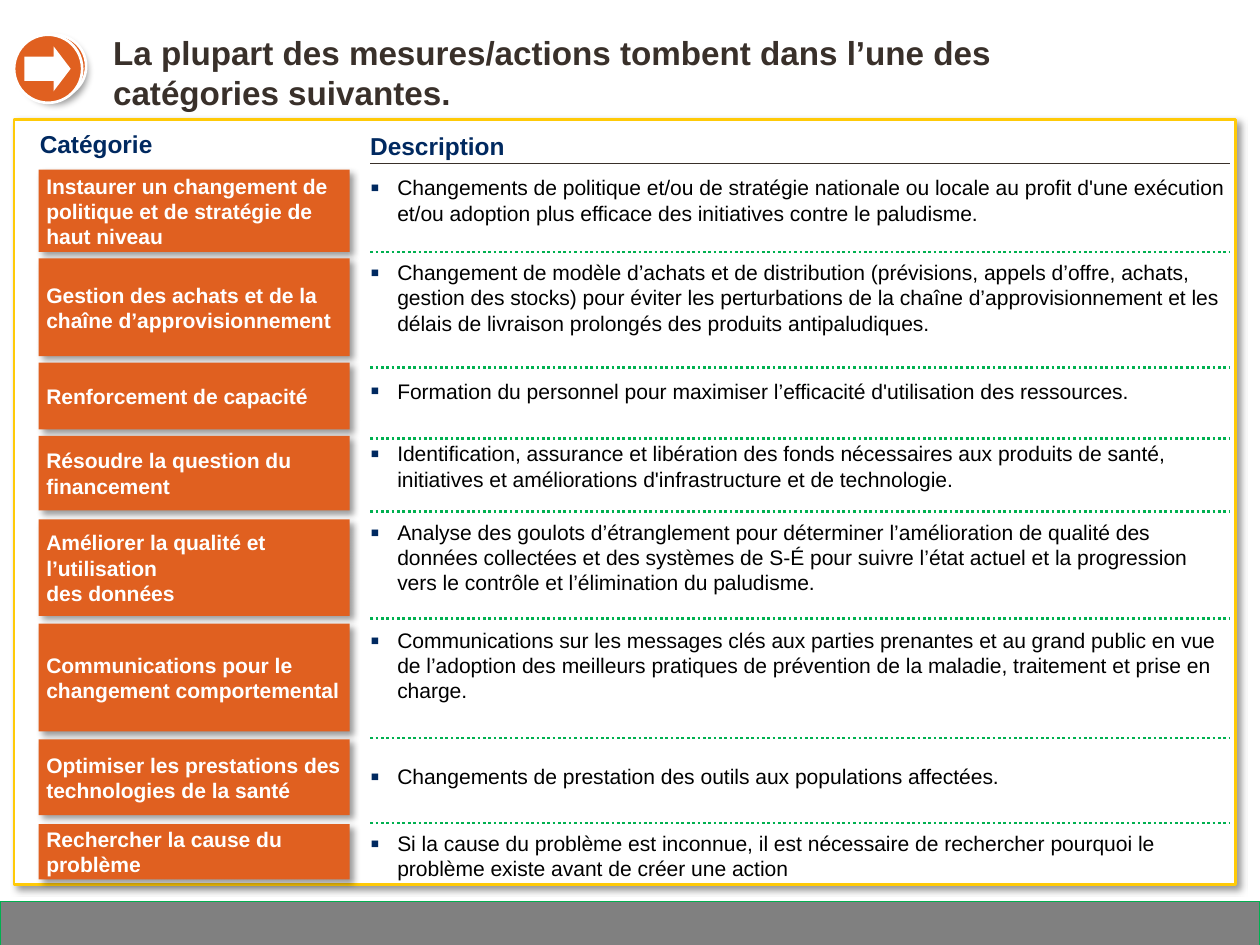
from copy import deepcopy

from lxml import etree
from pptx import Presentation
from pptx.dml.color import RGBColor
from pptx.enum.dml import MSO_LINE
from pptx.enum.shapes import MSO_CONNECTOR, MSO_SHAPE
from pptx.enum.text import MSO_ANCHOR, PP_ALIGN
from pptx.oxml.ns import qn
from pptx.util import Inches, Pt

RECT, ELLIPSE, RIGHT_ARROW = MSO_SHAPE.RECTANGLE, MSO_SHAPE.OVAL, MSO_SHAPE.RIGHT_ARROW
STRAIGHT = MSO_CONNECTOR.STRAIGHT
DOTTED = MSO_LINE.ROUND_DOT
TOP, MIDDLE, BOTTOM = MSO_ANCHOR.TOP, MSO_ANCHOR.MIDDLE, MSO_ANCHOR.BOTTOM

# Content
TITLE = "La plupart des mesures/actions tombent dans l’une des catégories suivantes."
HEADINGS = [("Catégorie", 0.31, 1.0, 2.56), ("Description", 2.88, 1.02, 3.56)]

# Category, its top and height, description, its top and number of lines
ROWS = [
    ("Instaurer un changement de politique et de stratégie de haut niveau", 1.32, 0.64,
     "Changements de politique et/ou de stratégie nationale ou locale au profit d'une exécution "
     "et/ou adoption plus efficace des initiatives contre le paludisme.", 1.36, 2),
    ("Gestion des achats et de la\nchaîne d’approvisionnement", 2.01, 0.76,
     "Changement de modèle d’achats et de distribution (prévisions, appels d’offre, achats, "
     "gestion des stocks) pour éviter les perturbations de la chaîne d’approvisionnement et les "
     "délais de livraison prolongés des produits antipaludiques.", 2.02, 3),
    ("Renforcement de capacité", 2.82, 0.52,
     "Formation du personnel pour maximiser l’efficacité d'utilisation des ressources.", 2.94, 1),
    ("Résoudre la question du financement", 3.39, 0.58,
     "Identification, assurance et libération des fonds nécessaires aux produits de santé, "
     "initiatives et améliorations d'infrastructure et de technologie.", 3.43, 2),
    ("Améliorer la qualité et l’utilisation\ndes données", 4.04, 0.75,
     "Analyse des goulots d’étranglement pour déterminer l’amélioration de qualité des "
     "données collectées et des systèmes de S-É pour suivre l’état actuel et la progression "
     "vers le contrôle et l’élimination du paludisme.", 4.04, 3),
    ("Communications pour le changement comportemental", 4.85, 0.84,
     "Communications sur les messages clés aux parties prenantes et au grand public en vue "
     "de l’adoption des meilleurs pratiques de prévention de la maladie, traitement et prise en "
     "charge.", 4.88, 3),
    ("Optimiser les prestations des technologies de la santé", 5.75, 0.59,
     "Changements de prestation des outils aux populations affectées.", 5.94, 1),
    ("Rechercher la cause du problème", 6.41, 0.43,
     "Si la cause du problème est inconnue, il est nécessaire de rechercher pourquoi le "
     "problème existe avant de créer une action", 6.46, 2),
]
SEPARATORS = [1.96, 2.86, 3.41, 3.98, 4.81, 5.74, 6.4]

# Format
ORANGE, WHITE, NAVY, BROWN, GREEN = "E06020", "FFFFFF", "002960", "39302A", "00B050"
TITLE_FONT = {"size": Pt(18.6), "bold": True}
HEADING_FONT = {"size": Pt(13.7), "bold": True}
CATEGORY_FONT = {"size": Pt(11.8), "bold": True}
DESCRIPTION_FONT = {"size": Pt(11.8), "bold": False}
CATEGORY_LEFT, CATEGORY_WIDTH = 0.3, 2.42
DESCRIPTION_LEFT, DESCRIPTION_WIDTH = 2.88, 6.69
LINE_HEIGHT = 0.2
BULLET_INDENT = 0.21

prs = Presentation()
prs.slide_width, prs.slide_height = Inches(9.8), Inches(7.35)
slide = prs.slides.add_slide(prs.slide_layouts[6])


def rgb(value):
    return RGBColor.from_string(value)


def add_shadow(shape, angle):
    effects = shape._element.spPr.find(qn("a:effectLst"))
    outer = etree.SubElement(effects, qn("a:outerShdw"), blurRad=str(Pt(4)), dist=str(Pt(3)),
                             dir=str(angle * 60000), algn="tl", rotWithShape="0")
    color = etree.SubElement(outer, qn("a:srgbClr"), val="000000")
    etree.SubElement(color, qn("a:alpha"), val="40000")


def draw(kind, box, fill, line=None, weight=0.75, shadow_angle=None):
    shape = slide.shapes.add_shape(kind, *map(Inches, box))
    shape.shadow.inherit = False
    shape.fill.solid()
    shape.fill.fore_color.rgb = rgb(fill)
    if line:
        shape.line.color.rgb = rgb(line)
        shape.line.width = Pt(weight)
    else:
        shape.line.fill.background()
    if shadow_angle is not None:
        add_shadow(shape, shadow_angle)
    return shape


def add_bullet(paragraph):
    props = paragraph._p.get_or_add_pPr()
    props.set("marL", str(Inches(BULLET_INDENT)))
    props.set("indent", str(-Inches(BULLET_INDENT)))
    color = etree.SubElement(props, qn("a:buClr"))
    etree.SubElement(color, qn("a:srgbClr"), val=NAVY)
    etree.SubElement(props, qn("a:buSzPct"), val="125000")
    etree.SubElement(props, qn("a:buFont"), typeface="Arial")
    etree.SubElement(props, qn("a:buChar"), char="▪")


def write(shape, text, font, color, anchor=TOP, inset=0, bullet=False):
    frame = shape.text_frame
    frame.word_wrap = True
    frame.vertical_anchor = anchor
    for side in ("left", "top", "right", "bottom"):
        setattr(frame, "margin_" + side, Inches(inset))
    paragraph = frame.paragraphs[0]
    paragraph.text = text
    paragraph.alignment = PP_ALIGN.LEFT
    if bullet:
        add_bullet(paragraph)
    for run in paragraph.runs:
        for name, value in {"name": "Arial", **font}.items():
            setattr(run.font, name, value)
        run.font.color.rgb = rgb(color)
    # Line breaks take the size of the text around them
    for line_break in paragraph._p.findall(qn("a:br")):
        line_break.append(deepcopy(paragraph.runs[0]._r.rPr))


def add_text(box, *args, **kwargs):
    write(slide.shapes.add_textbox(*map(Inches, box)), *args, **kwargs)


def add_rule(y, color, weight, dash=None):
    right = DESCRIPTION_LEFT + DESCRIPTION_WIDTH
    rule = slide.shapes.add_connector(
        STRAIGHT, Inches(DESCRIPTION_LEFT), Inches(y), Inches(right), Inches(y))
    rule.line.color.rgb = rgb(color)
    rule.line.width = Pt(weight)
    if dash:
        rule.line.dash_style = dash
    etree.SubElement(rule._element.spPr, qn("a:effectLst"))


# Footer, title and frame
draw(RECT, (0, 7.01, 9.8, 0.37), "808080", GREEN)
add_text((0.88, 0.25, 6.9, 0.63), TITLE, TITLE_FONT, BROWN)
draw(RECT, (0.11, 0.93, 9.5, 5.95), WHITE, "FFCA08", 1.5, shadow_angle=45)

# Column headings
for heading, left, top, width in HEADINGS:
    add_text((left, top, width, 0.23), heading, HEADING_FONT, NAVY, BOTTOM)
add_rule(1.27, BROWN, 0.75)

# Categories and descriptions
for category, top, height, description, text_top, line_count in ROWS:
    category_box = draw(RECT, (CATEGORY_LEFT, top, CATEGORY_WIDTH, height), ORANGE,
                        shadow_angle=45)
    write(category_box, category, CATEGORY_FONT, WHITE, MIDDLE, inset=0.06)
    add_text((DESCRIPTION_LEFT, text_top, DESCRIPTION_WIDTH, line_count * LINE_HEIGHT),
             description, DESCRIPTION_FONT, "000000", bullet=True)
for y in SEPARATORS:
    add_rule(y, GREEN, 1.5, DOTTED)

# Arrow badge
draw(ELLIPSE, (0.18, 0.27, 0.49, 0.49), ORANGE, WHITE, 1.5, shadow_angle=90)
draw(ELLIPSE, (0.11, 0.27, 0.53, 0.53), ORANGE, WHITE, 1.5)
arrow = draw(RIGHT_ARROW, (0.19, 0.36, 0.36, 0.35), WHITE)
arrow.adjustments[0], arrow.adjustments[1] = 0.54, 0.38

prs.save("out.pptx")
